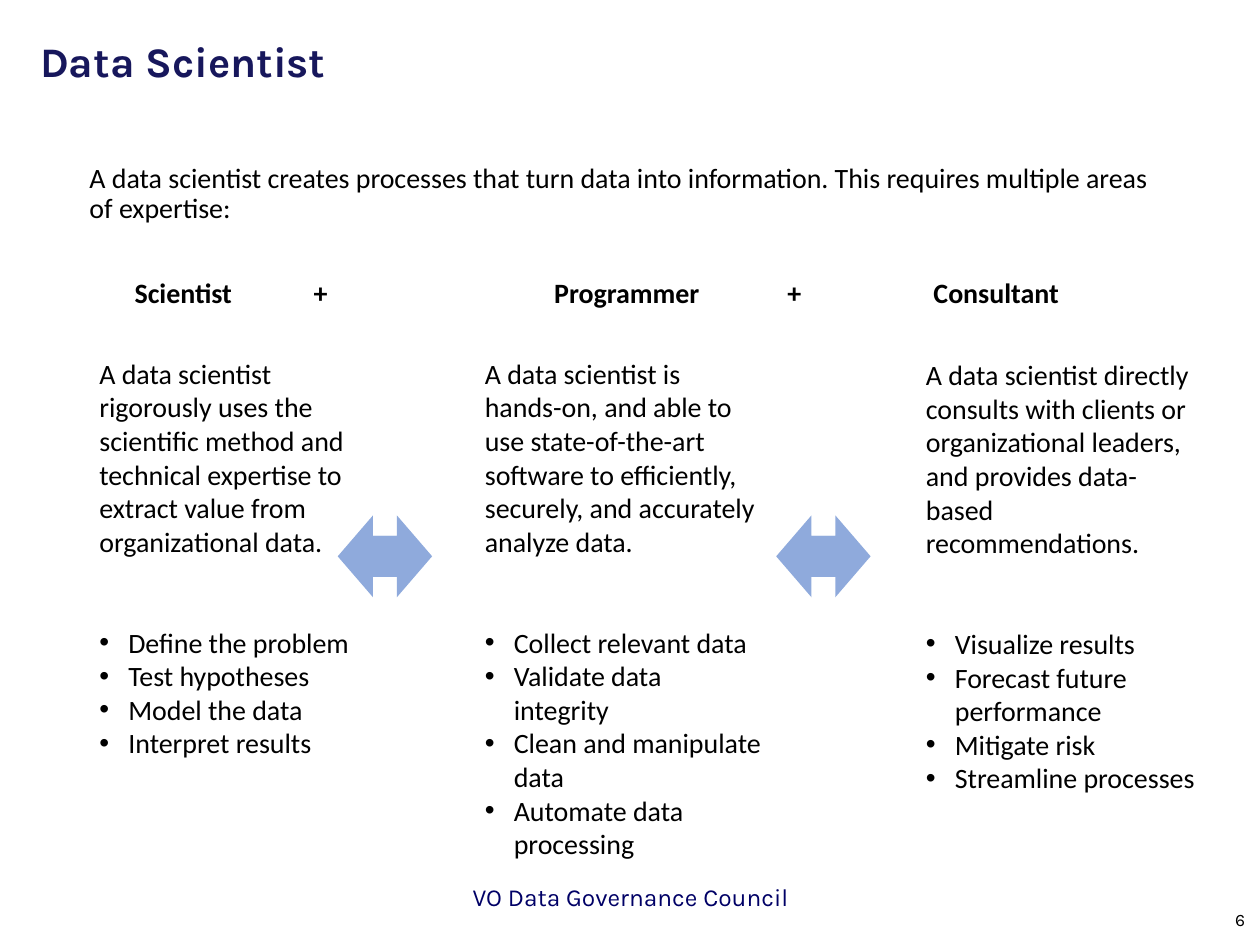
from dataclasses import dataclass

from lxml import etree
from pptx import Presentation
from pptx.dml.color import RGBColor
from pptx.enum.shapes import MSO_SHAPE
from pptx.enum.text import MSO_ANCHOR, PP_ALIGN
from pptx.oxml.ns import qn
from pptx.util import Inches, Pt

ARROW = MSO_SHAPE.RIGHT_ARROW
TOP, MIDDLE = MSO_ANCHOR.TOP, MSO_ANCHOR.MIDDLE
LEFT, CENTER, RIGHT = PP_ALIGN.LEFT, PP_ALIGN.CENTER, PP_ALIGN.RIGHT


@dataclass(frozen=True)
class Theme:
    text: str = "000000"
    title: str = "17175C"
    footer: str = "000066"
    arrow: str = "8FAADC"
    body_font: str = "Calibri"
    head_font: str = "Karla"
    title_size: int = 24
    body_size: int = 16
    footer_size: int = 14
    number_size: int = 10


THEME = Theme()


def write(para, text, size=THEME.body_size, font=THEME.body_font, color=THEME.text,
          bold=False, align=LEFT, spacing=None, before=0):
    para.alignment = align
    para.line_spacing = spacing
    para.space_before = Pt(before)
    span = para.add_run()
    span.text = text
    span.font.size = Pt(size)
    span.font.name = font
    span.font.bold = bold
    span.font.color.rgb = RGBColor.from_string(color)


class Page:
    """Holds the theme and the current slide, and draws each kind of element."""

    def __init__(self, slide, theme):
        self.shapes = slide.shapes
        self.theme = theme

    def box(self, left, top, width, height, anchor=TOP):
        box = self.shapes.add_textbox(Inches(left), Inches(top), Inches(width), Inches(height))
        frame = box.text_frame
        frame.word_wrap = True
        frame.vertical_anchor = anchor
        return frame

    def label(self, place, text, anchor=TOP, **style):
        frame = self.box(*place, anchor=anchor)
        write(frame.paragraphs[0], text, **style)
        return frame

    def headings(self, place, words, stops):
        frame = self.label(place, "".join("\t" + word for word in words), bold=True, spacing=0.9)
        properties = frame.paragraphs[0]._p.get_or_add_pPr()
        tabs = etree.SubElement(properties, qn("a:tabLst"))
        for stop in stops:
            etree.SubElement(tabs, qn("a:tab"), pos=str(Inches(stop)), algn="l")

    def role(self, place, summary, duties):
        frame = self.label(place, summary)
        for index, duty in enumerate(duties):
            para = frame.add_paragraph()
            write(para, duty, before=0 if index else 38.4)
            properties = para._p.get_or_add_pPr()
            properties.set("marL", str(Inches(0.23)))
            properties.set("indent", str(-Inches(0.23)))
            etree.SubElement(properties, qn("a:buFont"), typeface="Arial")
            etree.SubElement(properties, qn("a:buChar"), char="•")

    def double_arrow(self, left, top):
        for offset, rotation in ((0.19, 0), (0, 180)):
            arrow = self.shapes.add_shape(
                ARROW, Inches(left + offset), Inches(top), Inches(0.56), Inches(0.65))
            arrow.rotation = rotation
            arrow.shadow.inherit = False
            arrow.fill.solid()
            arrow.fill.fore_color.rgb = RGBColor.from_string(self.theme.arrow)
            arrow.line.fill.background()


ROLES = (
    ((0.69, 2.78, 2.21, 3.33),
     "A data scientist rigorously uses the scientific method and technical expertise "
     "to extract value from organizational data.",
     ("Define the problem", "Test hypotheses", "Model the data", "Interpret results")),
    ((3.75, 2.78, 2.4, 3.87),
     "A data scientist is hands-on, and able to use state-of-the-art software to "
     "efficiently, securely, and accurately analyze data.",
     ("Collect relevant data", "Validate data integrity", "Clean and manipulate data",
      "Automate data processing")),
    ((7.25, 2.79, 2.35, 4.41),
     "A data scientist directly consults with clients or organizational leaders, "
     "and provides data-based recommendations.",
     ("Visualize results", "Forecast future performance", "Mitigate risk",
      "Streamline processes")),
)


def main():
    deck = Presentation()
    deck.slide_width, deck.slide_height = Inches(10), Inches(7.5)
    page = Page(deck.slides.add_slide(deck.slide_layouts[6]), THEME)

    page.label((0.22, 0.17, 8.62, 0.68), "Data Scientist", MIDDLE, size=THEME.title_size,
               font=THEME.head_font, color=THEME.title, bold=True, spacing=0.9)
    intro = page.label(
        (0.64, 1, 8.62, 1.09),
        "A data scientist creates processes that turn data into information. "
        "This requires multiple areas of expertise:", MIDDLE, spacing=0.9)
    intro.margin_left = intro.margin_right = Inches(0.07)
    intro.margin_top = intro.margin_bottom = Inches(0.04)

    page.headings((0.62, 2.17, 8.62, 3.57),
                  ("Scientist", "+", "Programmer", "+", "Consultant"),
                  (0.35, 1.77, 3.68, 5.53, 6.69))
    for place, summary, duties in ROLES:
        page.role(place, summary, duties)
    for left in (2.68, 6.16):
        page.double_arrow(left, 4.09)

    page.label((7.65, 7.1, 2.33, 0.4), "6", MIDDLE, size=THEME.number_size,
               font=THEME.head_font, align=RIGHT)
    page.label((3.42, 6.95, 3.17, 0.4), "VO Data Governance Council", size=THEME.footer_size,
               font=THEME.head_font, color=THEME.footer, align=CENTER)
    deck.save("out.pptx")


if __name__ == "__main__":
    main()
